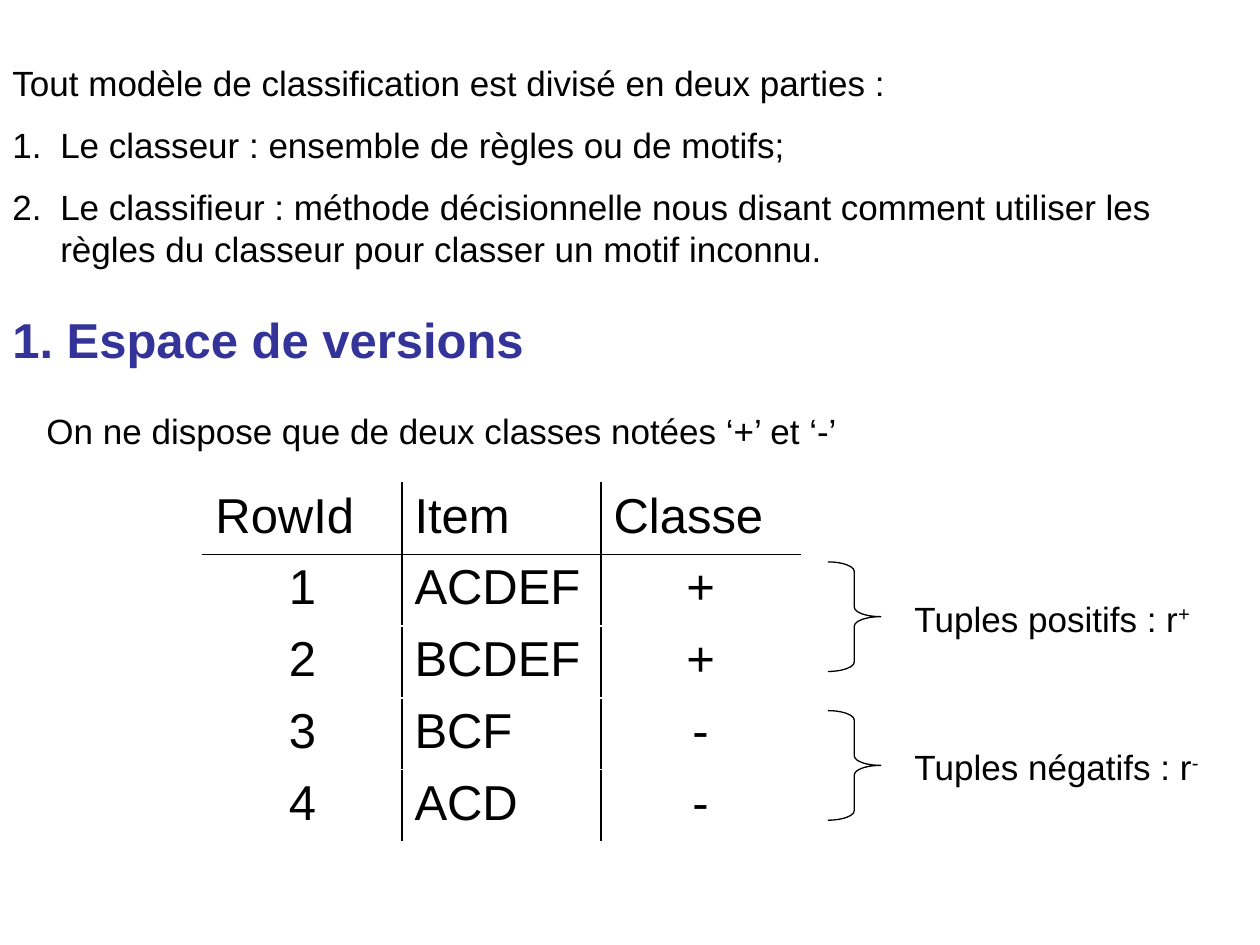
from lxml.etree import SubElement
from pptx import Presentation
from pptx.dml.color import RGBColor
from pptx.enum.shapes import MSO_SHAPE as Shape
from pptx.enum.text import MSO_AUTO_SIZE as AutoSize, PP_ALIGN as Align
from pptx.oxml import parse_xml
from pptx.oxml.ns import nsdecls, qn
from pptx.util import Inches, Pt

BLACK = RGBColor(0x00, 0x00, 0x00)
INDIGO = RGBColor(0x33, 0x33, 0x99)
FONT = "Arial"
BODY, LARGE = 20, 28

INTRO = [
    "Tout modèle de classification est divisé en deux parties :",
    "Le classeur : ensemble de règles ou de motifs;",
    "Le classifieur : méthode décisionnelle nous disant comment utiliser "
    "les règles du classeur pour classer un motif inconnu.",
]
HEADING = "1. Espace de versions"
CLASSES = "On ne dispose que de deux classes notées ‘+’ et ‘-’"
ROWS = [
    ("RowId", "Item", "Classe"),
    ("1", "ACDEF", "+"),
    ("2", "BCDEF", "+"),
    ("3", "BCF", "-"),
    ("4", "ACD", "-"),
]
CENTRED_COLUMNS = (0, 2)
# label, sign, top of the brace
TUPLES = [
    ("Tuples positifs : r", "+", 4.46),
    ("Tuples négatifs : r", "-", 5.64),
]

TABLE_LEFT, TABLE_TOP, COLUMN, ROW = 1.61, 3.83, 1.58, 0.57
BRACE_LEFT, BRACE_WIDTH, BRACE_HEIGHT = 6.57, 0.42, 0.87
LABEL_LEFT, LABEL_WIDTH, LABEL_HEIGHT = 7.16, 2.47, 0.43
INDENT = Inches(0.38)


def style(para, size, colour=BLACK, bold=False):
    font = para.font
    font.name, font.size, font.bold = FONT, Pt(size), bold
    font.color.rgb = colour


def add_text(shapes, area, lines, size=BODY, colour=BLACK, bold=False):
    """Add a wrapped text box, one paragraph per line, and return its paragraphs."""
    frame = shapes.add_textbox(*map(Inches, area)).text_frame
    frame.word_wrap = True
    frame.auto_size = AutoSize.SHAPE_TO_FIT_TEXT
    frame.text = "\n".join(lines)
    for index, para in enumerate(frame.paragraphs):
        style(para, size, colour, bold)
        if index:
            para.space_before = Pt(11.5)
    return frame.paragraphs


def add_intro(shapes):
    for index, para in enumerate(add_text(shapes, (0, 0.44, 9.65, 1.77), INTRO)):
        props = para._p.get_or_add_pPr()
        props.set("marL", str(INDENT))
        props.set("indent", str(-INDENT))
        if index:
            number = SubElement(props, qn("a:buAutoNum"), type="arabicPeriod")
            props.find(qn("a:defRPr")).addprevious(number)


def add_borders(cell, sides):
    """Draw the sides, given in the order L, R, T, B, ahead of the cell's fill."""
    props = cell._tc.get_or_add_tcPr()
    for place, side in enumerate(sides):
        props.insert(place, parse_xml(
            f'<a:ln{side} {nsdecls("a")} w="{Pt(1)}"><a:solidFill>'
            f'<a:srgbClr val="{BLACK}"/></a:solidFill></a:ln{side}>'))


def add_item_table(shapes):
    columns = len(ROWS[0])
    table = shapes.add_table(
        len(ROWS), columns, Inches(TABLE_LEFT), Inches(TABLE_TOP),
        Inches(COLUMN * columns), Inches(ROW * len(ROWS))).table
    table.first_row = table.horz_banding = False
    for column in table.columns:
        column.width = Inches(COLUMN)
    for r, values in enumerate(ROWS):
        for c, value in enumerate(values):
            cell = table.cell(r, c)
            cell.text = value
            cell.fill.background()
            para = cell.text_frame.paragraphs[0]
            style(para, LARGE)
            if r and c in CENTRED_COLUMNS:
                para.alignment = Align.CENTER
            edges = {"L": c > 0, "R": c < columns - 1, "T": r == 1, "B": r == 0}
            add_borders(cell, [side for side, drawn in edges.items() if drawn])


def add_tuple_label(shapes, label, sign, top):
    group = shapes.add_group_shape().shapes
    brace = group.add_shape(
        Shape.RIGHT_BRACE, Inches(BRACE_LEFT), Inches(top),
        Inches(BRACE_WIDTH), Inches(BRACE_HEIGHT))
    brace.adjustments[0] = 0.18
    brace.shadow.inherit = False
    brace.fill.background()
    brace.line.color.rgb = BLACK
    brace.line.width = Pt(0.75)
    area = (LABEL_LEFT, top + 0.23, LABEL_WIDTH, LABEL_HEIGHT)
    para = add_text(group, area, [label])[0]
    span = para.add_run()
    span.text = sign
    span._r.get_or_add_rPr().set("baseline", "30000")


def main():
    deck = Presentation()
    deck.slide_width, deck.slide_height = Inches(10), Inches(7.5)
    page = deck.slides.add_slide(deck.slide_layouts[6])
    shapes = page.shapes
    add_text(shapes, (0, 2.41, 9.13, 0.57), [HEADING], LARGE, INDIGO, True)
    add_intro(shapes)
    add_text(shapes, (0.27, 3.2, 8.35, 0.43), [CLASSES])
    add_item_table(shapes)
    for label, sign, top in TUPLES:
        add_tuple_label(shapes, label, sign, top)
    deck.save("out.pptx")


if __name__ == "__main__":
    main()
